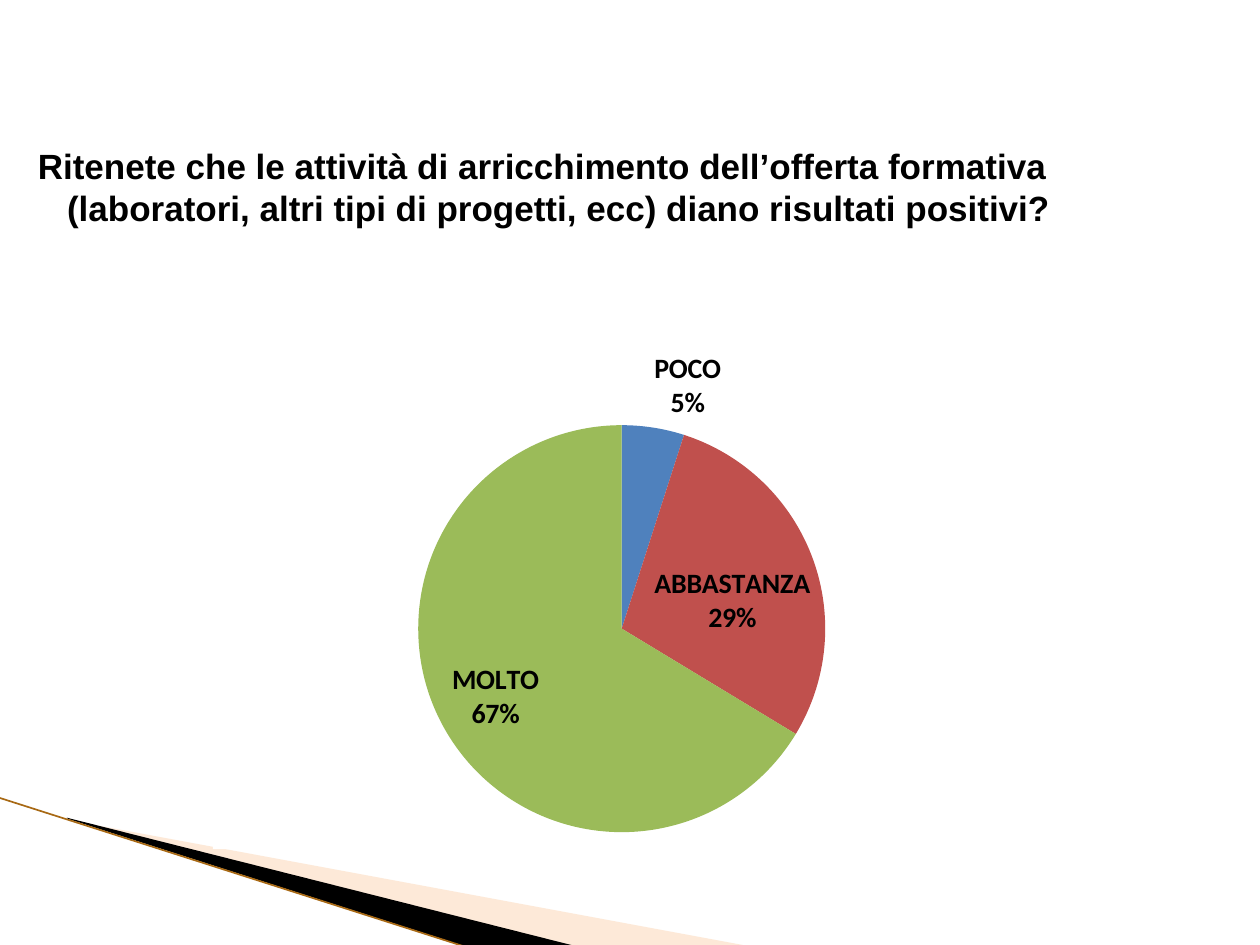
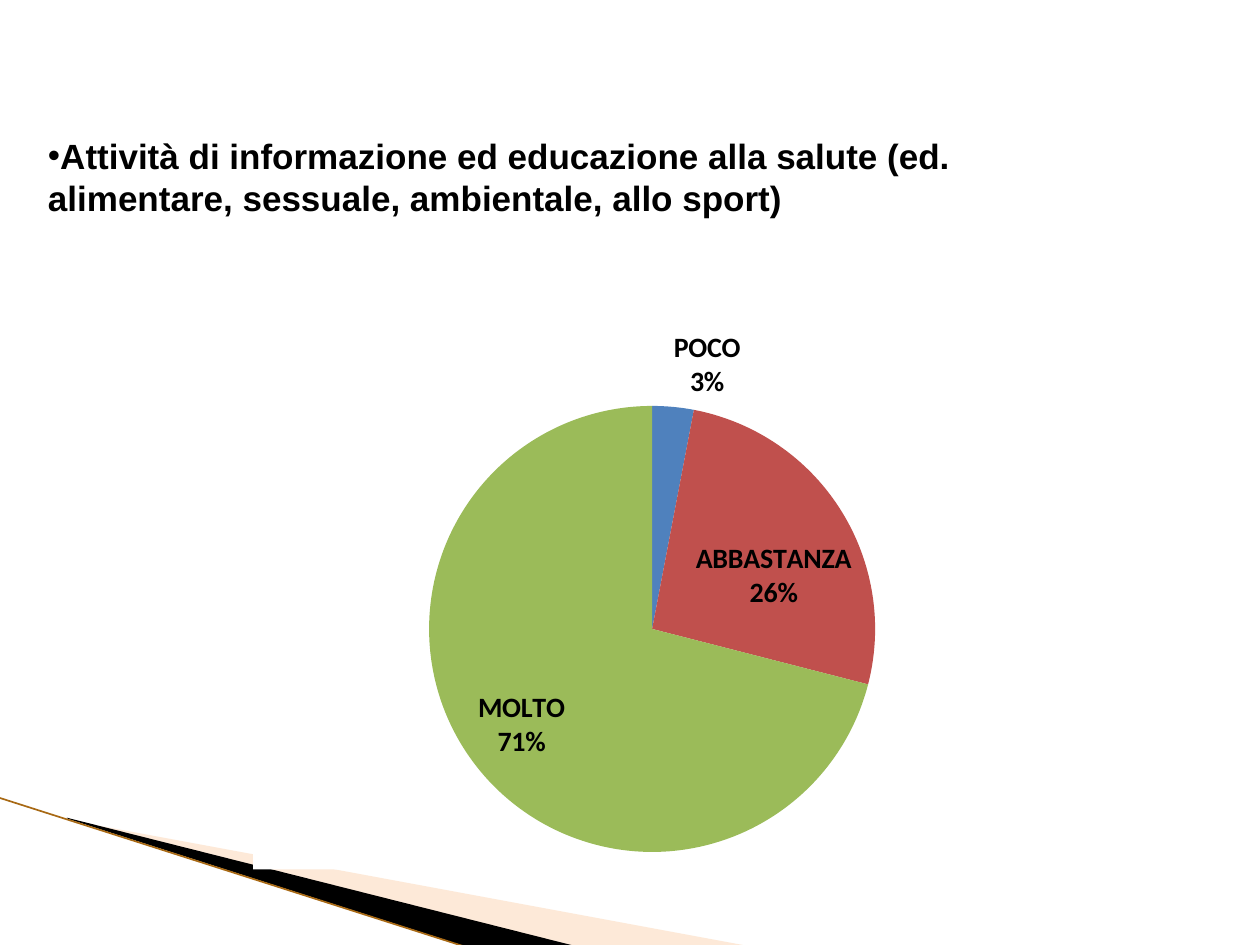
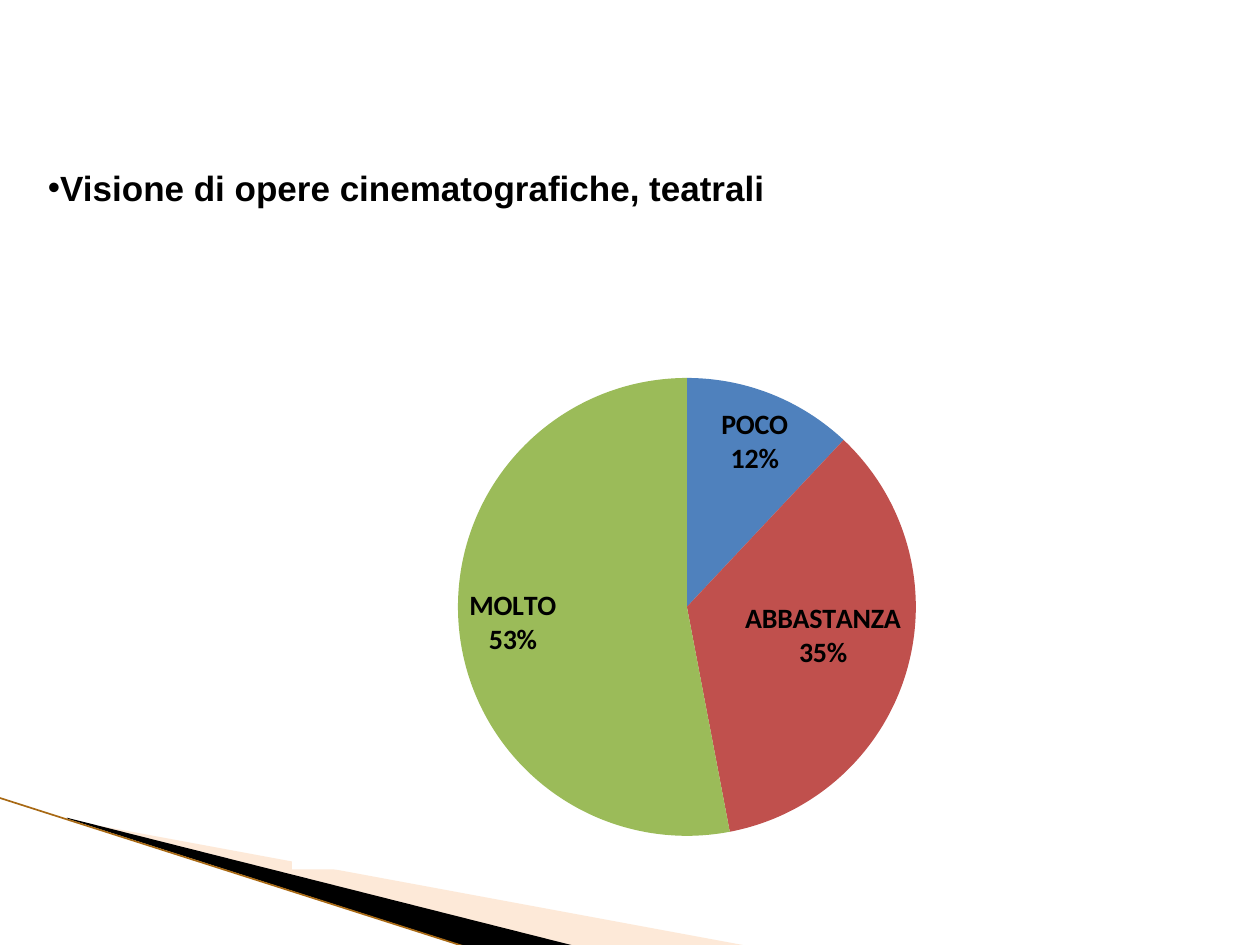
from lxml.etree import SubElement
from pptx import Presentation
from pptx.chart.data import CategoryChartData
from pptx.dml.color import RGBColor
from pptx.enum.chart import XL_CHART_TYPE, XL_LABEL_POSITION
from pptx.enum.shapes import MSO_CONNECTOR
from pptx.enum.text import MSO_ANCHOR, MSO_AUTO_SIZE, PP_ALIGN
from pptx.oxml import parse_xml
from pptx.oxml.ns import nsdecls, qn
from pptx.util import Pt

BLACK = RGBColor(0x00, 0x00, 0x00)
PEACH = RGBColor(0xFB, 0xC9, 0x9E)
BROWN = RGBColor(0xA8, 0x69, 0x14)
BLUE = RGBColor(0x4F, 0x81, 0xBD)
RED = RGBColor(0xC0, 0x50, 0x4D)
GREEN = RGBColor(0x9B, 0xBB, 0x59)

ANSWERS = {"POCO": BLUE, "ABBASTANZA": RED, "MOLTO": GREEN}
HANGING_INDENT = Pt(16.7)

QUESTIONS = [
    dict(lines=["Ritenete che le attività di arricchimento dell’offerta formativa",
                "(laboratori, altri tipi di progetti, ecc) diano risultati positivi?"],
         title_box=(14.4, 79, 657.4, 80), bullet=False, wrap=True,
         values=(5, 29, 67), chart_box=(121.7, 190.8, 538.6, 294.5),
         pie=(239, 243, 232.6)),
    dict(lines=["Attività di informazione ed educazione alla salute (ed. alimentare, "
                "sessuale, ambientale, allo sport)"],
         title_box=(20.2, 73.4, 640.8, 80), bullet=True, wrap=True,
         values=(3, 26, 71), chart_box=(144.7, 179.3, 521.3, 317.5),
         pie=(245.2, 232, 254.9)),
    dict(lines=["Visione di opere cinematografiche, teatrali"],
         title_box=(20.2, 91.4, 427, 55.4), bullet=True, wrap=False,
         values=(12, 35, 53), chart_box=(167, 167.8, 504.7, 329),
         pie=(261.7, 216, 261.7)),
]


def add_wedge(s, points, color, opacity=None):
    start, *rest = [(Pt(x), Pt(y)) for x, y in points]
    builder = s.shapes.build_freeform(*start)
    builder.add_line_segments(rest)
    sp = builder.convert_to_shape()
    sp.shadow.inherit = False
    sp.fill.solid()
    sp.fill.fore_color.rgb = color
    sp.line.fill.background()
    if opacity:
        clr = sp.element.spPr.find(".//" + qn("a:srgbClr"))
        SubElement(clr, qn("a:alpha"), val=str(opacity * 1000))
    return sp


def add_edge(s, x1, y1, x2, y2):
    line = s.shapes.add_connector(MSO_CONNECTOR.STRAIGHT, Pt(x1), Pt(y1), Pt(x2), Pt(y2))
    line.line.color.rgb = BROWN
    line.line.width = Pt(0.95)
    SubElement(line.element.spPr, qn("a:effectLst"))
    return line


def decorate_layout(layout, s):
    corner = [
        add_wedge(s, [(39.6, 468.7), (428.4, 540.7), (328.3, 540.7), (39.6, 468)], PEACH, 40),
        add_wedge(s, [(38.2, 467.3), (329, 540.7), (267.8, 541.4), (38.9, 468)], BLACK),
        add_edge(s, -0.7, 455.8, 267.1, 541.4),
    ]
    for sp in corner:
        layout.shapes.element.append(sp.element)


def set_title(s, lines, box, bullet, wrap):
    title = s.shapes.title
    title.left, title.top, title.width, title.height = map(Pt, box)
    tf = title.text_frame
    tf.text = "\n".join(lines)
    tf.auto_size = MSO_AUTO_SIZE.NONE
    tf.word_wrap = wrap
    tf.vertical_anchor = MSO_ANCHOR.TOP
    for i, p in enumerate(tf.paragraphs):
        p.alignment = PP_ALIGN.LEFT
        pPr = p._p.get_or_add_pPr()
        pPr.set("marL", str(HANGING_INDENT if i else 0))
        pPr.set("indent", "0")
        if bullet:
            SubElement(pPr, qn("a:buFont"), typeface="Arial")
            SubElement(pPr, qn("a:buChar"), char="•")
        for r in p.runs:
            r.font.name = "Arial"
            r.font.size = Pt(20)
            r.font.bold = True
            r.font.color.rgb = BLACK


def fill_chart_white(chart):
    chart.element.find(qn("c:chart")).addnext(parse_xml(
        f'<c:spPr {nsdecls("c", "a")}><a:solidFill><a:srgbClr val="FFFFFF"/></a:solidFill>'
        '<a:ln><a:noFill/></a:ln></c:spPr>'))


def place_pie(chart, chart_box, pie):
    left, top, width, height = chart_box
    x, y, diameter = pie
    plot_area = chart.element.find(".//" + qn("c:plotArea"))
    for old in plot_area.findall(qn("c:layout")):
        plot_area.remove(old)
    layout = parse_xml(f'<c:layout {nsdecls("c")}><c:manualLayout/></c:layout>')
    settings = [("layoutTarget", "inner"), ("xMode", "edge"), ("yMode", "edge"),
                ("x", (x - left) / width), ("y", (y - top) / height),
                ("w", diameter / width), ("h", diameter / height)]
    for tag, val in settings:
        SubElement(layout[0], qn("c:" + tag), val=str(val))
    plot_area.insert(0, layout)


def label_slices(chart):
    plot = chart.plots[0]
    plot.has_data_labels = True
    labels = plot.data_labels
    labels.show_value = True
    labels.show_category_name = True
    labels.number_format = '0"%"'
    labels.number_format_is_linked = False
    labels.position = XL_LABEL_POSITION.BEST_FIT
    labels.font.name = "Calibri"
    labels.font.size = Pt(16)
    labels.font.bold = True
    labels.font.color.rgb = BLACK
    chart.element.find(".//" + qn("c:showBubbleSize")).addnext(
        parse_xml(f'<c:separator {nsdecls("c")}>\n</c:separator>'))


def add_pie(s, values, chart_box, pie):
    data = CategoryChartData()
    data.categories = list(ANSWERS)
    data.add_series("Series 1", values)
    chart = s.shapes.add_chart(XL_CHART_TYPE.PIE, *map(Pt, chart_box), data).chart
    chart.has_title = False
    chart.has_legend = False
    chart.font.name = "Calibri"
    chart.font.size = Pt(10)
    chart.font.color.rgb = BLACK
    plot = chart.plots[0]
    plot.vary_by_categories = True
    for i, color in enumerate(ANSWERS.values()):
        fill = plot.series[0].points[i].format.fill
        fill.solid()
        fill.fore_color.rgb = color
    label_slices(chart)
    fill_chart_white(chart)
    place_pie(chart, chart_box, pie)


def main():
    prs = Presentation()
    prs.slide_width, prs.slide_height = Pt(720), Pt(540)
    layout = prs.slide_layouts.get_by_name("Title Only")
    for q in QUESTIONS:
        s = prs.slides.add_slide(layout)
        set_title(s, q["lines"], q["title_box"], q["bullet"], q["wrap"])
        add_pie(s, q["values"], q["chart_box"], q["pie"])
    decorate_layout(layout, prs.slides[0])
    prs.save("out.pptx")


if __name__ == "__main__":
    main()
